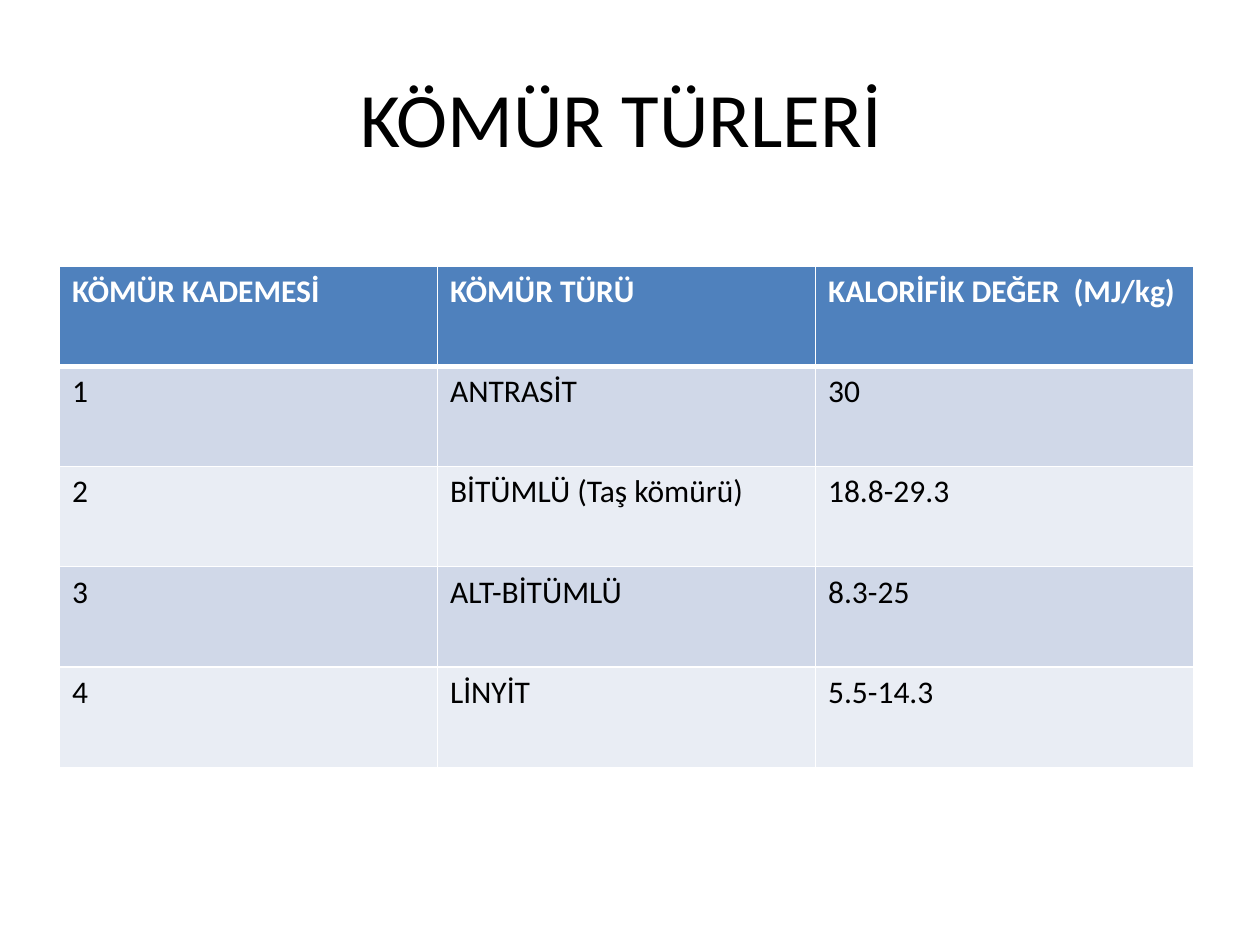
from lxml import etree
from pptx import Presentation
from pptx.dml.color import RGBColor
from pptx.enum.text import MSO_ANCHOR, PP_ALIGN
from pptx.oxml.ns import qn
from pptx.util import Pt

MIDDLE = MSO_ANCHOR.MIDDLE
CENTER = PP_ALIGN.CENTER
TITLE_ONLY = 5

BLACK = RGBColor(0x00, 0x00, 0x00)
WHITE = RGBColor(0xFF, 0xFF, 0xFF)
HEADER_BLUE = RGBColor(0x4F, 0x81, 0xBD)
BANDS = (RGBColor(0xD0, 0xD8, 0xE8), RGBColor(0xE9, 0xED, 0xF4))

COAL_TYPES = [
    ("KÖMÜR KADEMESİ", "KÖMÜR TÜRÜ", "KALORİFİK DEĞER  (MJ/kg)"),
    ("1", "ANTRASİT", "30"),
    ("2", "BİTÜMLÜ (Taş kömürü)", "18.8-29.3"),
    ("3", "ALT-BİTÜMLÜ", "8.3-25"),
    ("4", "LİNYİT", "5.5-14.3"),
]


class SlideBuilder:
    """Holds the text style and the slide being filled."""

    font_name = "Calibri"

    def __init__(self, slide):
        self.slide = slide

    def add_text(self, text_frame, text, size, color, bold=False):
        paragraph = text_frame.paragraphs[0]
        run = paragraph.add_run()
        run.text = text
        font_format = {"name": self.font_name, "size": Pt(size), "bold": bold}
        for attribute, value in font_format.items():
            setattr(run.font, attribute, value)
        run.font.color.rgb = color
        return paragraph

    def title(self, text, left, top, width, height):
        shape = self.slide.shapes.title
        box = {"left": left, "top": top, "width": width, "height": height}
        for attribute, value in box.items():
            setattr(shape, attribute, Pt(value))
        shape.text_frame.vertical_anchor = MIDDLE
        paragraph = self.add_text(shape.text_frame, text, 44, BLACK)
        paragraph.alignment = CENTER

    def border(self, cell, side, width):
        properties = cell._tc.get_or_add_tcPr()
        line = etree.SubElement(properties, qn(f"a:ln{side}"), w=str(Pt(width)))
        fill = etree.SubElement(line, qn("a:solidFill"))
        etree.SubElement(fill, qn("a:srgbClr"), val=str(WHITE))

    def table(self, rows, left, top, column_width, row_height):
        row_count, column_count = len(rows), len(rows[0])
        table = self.slide.shapes.add_table(
            row_count, column_count, Pt(left), Pt(top),
            Pt(column_width * column_count), Pt(row_height * row_count),
        ).table
        for column in table.columns:
            column.width = Pt(column_width)
        for row_index, values in enumerate(rows):
            table.rows[row_index].height = Pt(row_height)
            is_header = row_index == 0
            for column_index, text in enumerate(values):
                cell = table.cell(row_index, column_index)
                # A thick line separates the header from the body
                widths = {"L": 1, "R": 1, "T": 3 if row_index == 1 else 1,
                          "B": 3 if is_header else 1}
                for side, width in widths.items():
                    self.border(cell, side, width)
                cell.fill.solid()
                cell.fill.fore_color.rgb = (
                    HEADER_BLUE if is_header else BANDS[(row_index - 1) % 2]
                )
                self.add_text(cell.text_frame, text, 18,
                              WHITE if is_header else BLACK, is_header)


def main():
    presentation = Presentation()
    presentation.slide_width, presentation.slide_height = Pt(720), Pt(540)
    slide = presentation.slides.add_slide(presentation.slide_layouts[TITLE_ONLY])
    builder = SlideBuilder(slide)

    # Heading
    builder.title("KÖMÜR TÜRLERİ ", 36, 21.6, 648, 90)

    # Coal ranks with their calorific values
    builder.table(COAL_TYPES, left=34, top=152, column_width=216, row_height=57.3)

    presentation.save("out.pptx")


if __name__ == "__main__":
    main()
